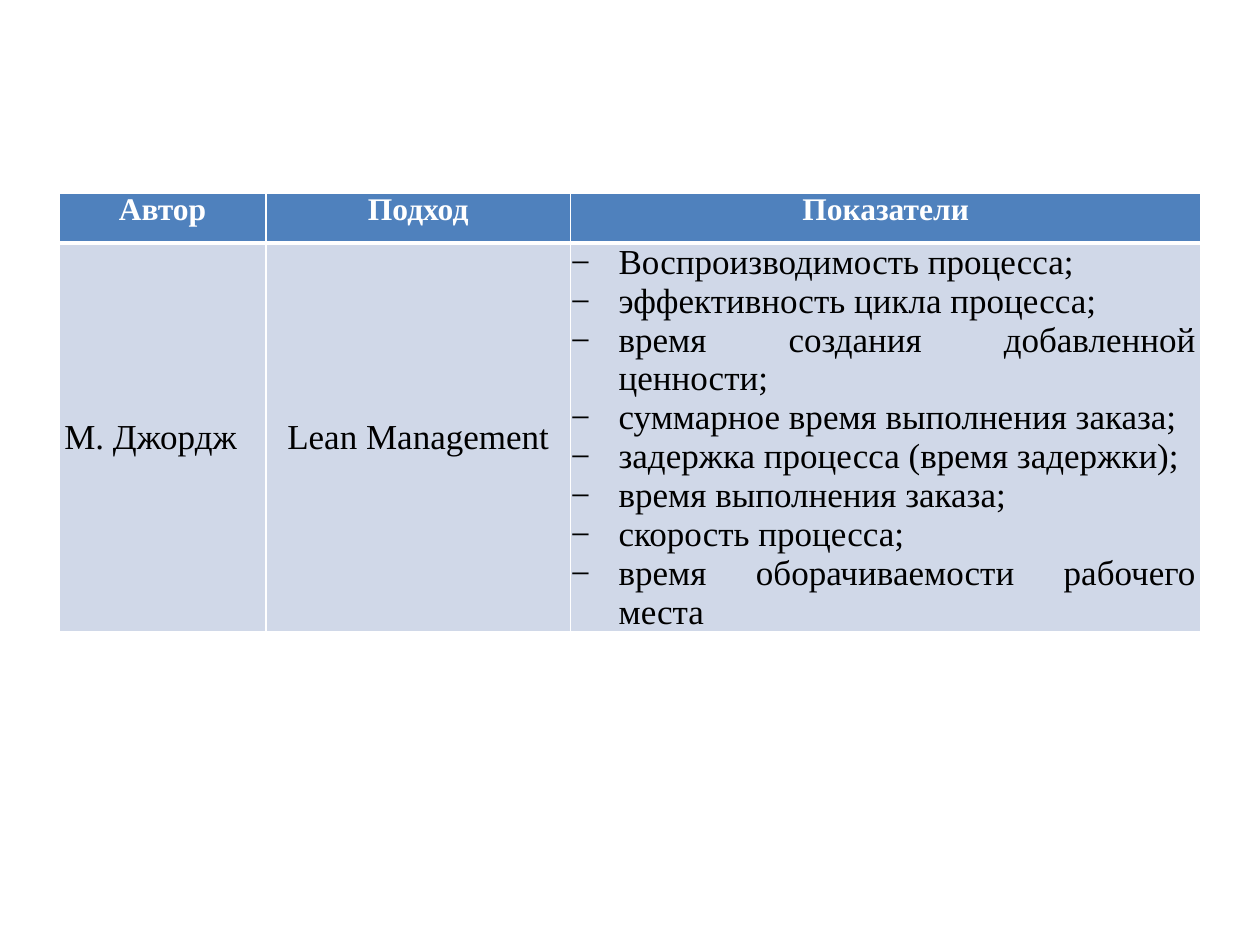
from lxml.etree import SubElement
from pptx import Presentation
from pptx.dml.color import RGBColor
from pptx.enum.text import MSO_ANCHOR as Anchor, PP_ALIGN as Align
from pptx.oxml.ns import qn
from pptx.util import Inches, Pt

WHITE = RGBColor(0xFF, 0xFF, 0xFF)
BLACK = RGBColor(0, 0, 0)
HEADER_BLUE = RGBColor(0x4F, 0x81, 0xBD)
BODY_BLUE = RGBColor(0xD0, 0xD8, 0xE8)
FONT = "Times New Roman"

COLUMN_WIDTHS = (1.64, 2.42, 5)
ROW_HEIGHTS = (0.4, 3.08)
HEADERS = ("Автор", "Подход", "Показатели")
INDICATORS = (
    "Воспроизводимость процесса;",
    "эффективность цикла процесса;",
    "время создания добавленной ценности;",
    "суммарное время выполнения заказа;",
    "задержка процесса (время задержки);",
    "время выполнения заказа;",
    "скорость процесса;",
    "время оборачиваемости рабочего места",
)


def set_borders(cell, bottom_width):
    properties = cell._tc.get_or_add_tcPr()
    widths = {"lnL": 1, "lnR": 1, "lnT": 1, "lnB": bottom_width}
    for side, width in widths.items():
        line = SubElement(properties, qn(f"a:{side}"), w=str(Pt(width)))
        fill = SubElement(line, qn("a:solidFill"))
        SubElement(fill, qn("a:srgbClr"), val=str(WHITE))


def set_indents(paragraph, left, right, first=0, bullet=None):
    properties = paragraph._p.get_or_add_pPr()
    for name, length in (("marL", left), ("marR", right), ("indent", first)):
        properties.set(name, str(Inches(length)))
    if bullet:
        SubElement(properties, qn("a:buFont"), typeface=FONT)
        SubElement(properties, qn("a:buChar"), char=bullet)


def write_paragraph(paragraph, text, size=20, color=BLACK, bold=False, align=Align.JUSTIFY):
    paragraph.alignment = align
    run = paragraph.add_run()
    run.text = text
    font = run.font
    font.name, font.size, font.bold = FONT, Pt(size), bold
    font.color.rgb = color


def style_cell(cell, color, anchor=Anchor.TOP, bottom_width=1):
    cell.margin_left = cell.margin_right = cell.margin_top = cell.margin_bottom = 0
    cell.vertical_anchor = anchor
    set_borders(cell, bottom_width)
    cell.fill.solid()
    cell.fill.fore_color.rgb = color


def fill_header(table):
    for column, title in enumerate(HEADERS):
        cell = table.cell(0, column)
        style_cell(cell, HEADER_BLUE, bottom_width=3)
        write_paragraph(cell.text_frame.paragraphs[0], title,
                        size=18, color=WHITE, bold=True, align=Align.CENTER)


def fill_body(table):
    author, approach, indicators = table.rows[1].cells
    for cell, text, align in ((author, "М. Джордж", Align.JUSTIFY),
                              (approach, "Lean Management", Align.CENTER)):
        style_cell(cell, BODY_BLUE, Anchor.MIDDLE)
        paragraph = cell.text_frame.paragraphs[0]
        write_paragraph(paragraph, text, align=align)
        set_indents(paragraph, 0.04, 0.04)

    style_cell(indicators, BODY_BLUE)
    frame = indicators.text_frame
    for index, text in enumerate(INDICATORS):
        paragraph = frame.add_paragraph() if index else frame.paragraphs[0]
        write_paragraph(paragraph, text)
        set_indents(paragraph, 0.38, 0.04, first=-0.38, bullet="−")


def add_approach_table(slide):
    shape = slide.shapes.add_table(
        len(ROW_HEIGHTS), len(COLUMN_WIDTHS), Inches(0.47), Inches(1.53),
        Inches(sum(COLUMN_WIDTHS)), Inches(sum(ROW_HEIGHTS)))
    table = shape.table
    table.horz_banding = False
    for column, width in zip(table.columns, COLUMN_WIDTHS):
        column.width = Inches(width)
    for row, height in zip(table.rows, ROW_HEIGHTS):
        row.height = Inches(height)
    fill_header(table)
    fill_body(table)


def main():
    presentation = Presentation()
    presentation.slide_width, presentation.slide_height = Inches(10), Inches(7.5)
    slide = presentation.slides.add_slide(presentation.slide_layouts[6])
    add_approach_table(slide)
    presentation.save("out.pptx")


if __name__ == "__main__":
    main()
